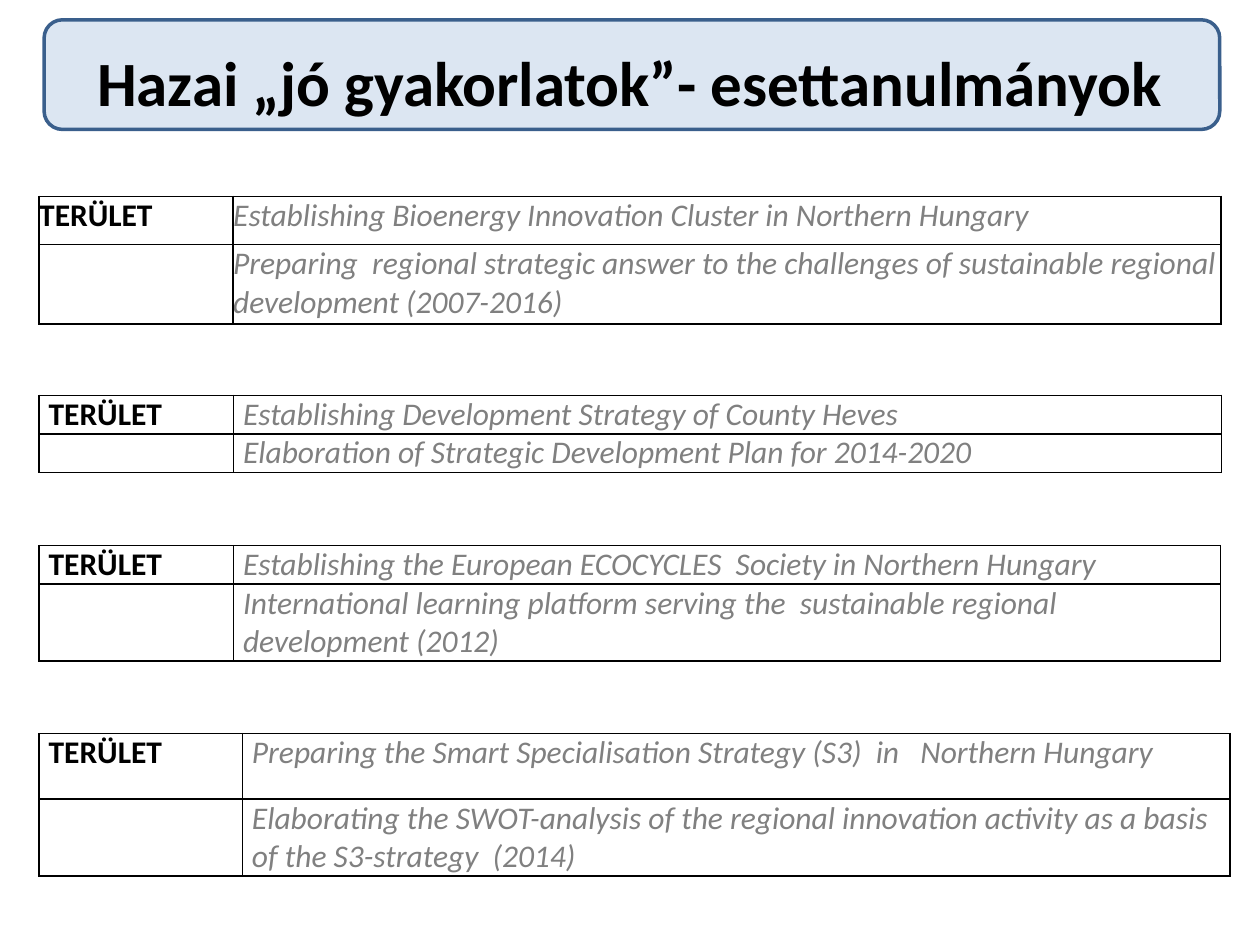
from pptx import Presentation
from pptx import util as u
from pptx.dml.color import RGBColor
from pptx.enum import shapes, text
from pptx.oxml import parse_xml
from pptx.oxml.ns import nsdecls

BLACK = RGBColor(0, 0, 0)
GREY = RGBColor(0x80, 0x80, 0x80)
PALE = RGBColor(0xDC, 0xE6, 0xF2)
BLUE = RGBColor(0x3A, 0x5F, 0x8C)
LEFT = 0.79
LABEL = "TERÜLET"

# top, label width, text width, row heights, side inset (cm), two texts
CASES = [
    (3.96, 3.91, 19.91, (0.97, 1.6), 0,
     "Establishing Bioenergy Innovation Cluster in Northern Hungary",
     "Preparing  regional strategic answer to the challenges of sustainable "
     "regional development (2007-2016)"),
    (7.97, 3.92, 19.91, (0.77, 0.77), 0.19,
     "Establishing Development Strategy of County Heves",
     "Elaboration of Strategic Development Plan for 2014-2020"),
    (11, 3.92, 19.89, (0.77, 1.53), 0.19,
     "Establishing the European ECOCYCLES  Society in Northern Hungary",
     "International learning platform serving the  sustainable regional "
     "development (2012)"),
    (14.79, 4.1, 19.91, (1.32, 1.53), 0.19,
     "Preparing the Smart Specialisation Strategy (S3)  in   Northern Hungary",
     "Elaborating the SWOT-analysis of the regional innovation activity as a "
     "basis of the S3-strategy  (2014)"),
]


class Deck:
    font = "Calibri"

    def __init__(self, show):
        self.slide = show.slides.add_slide(show.slide_layouts[5])

    def style(self, para, size, color, bold=False, italic=False):
        for run in para.runs:
            font = run.font
            font.name, font.size = self.font, u.Pt(size)
            font.bold, font.italic = bold, italic
            font.color.rgb = color

    def title(self, words, *box):
        head = self.slide.shapes.title
        head.left, head.top, head.width, head.height = map(u.Cm, box)
        frame = head.text_frame
        frame.text = words
        frame.vertical_anchor = text.MSO_ANCHOR.MIDDLE
        para = frame.paragraphs[0]
        para.alignment = text.PP_ALIGN.CENTER
        self.style(para, 36, BLACK, bold=True)

    def panel(self, *box):
        """Draw the rounded panel behind the title."""
        panel = self.slide.shapes.add_shape(
            shapes.MSO_SHAPE.ROUNDED_RECTANGLE, *map(u.Cm, box))
        panel.shadow.inherit = False
        panel.fill.solid()
        panel.fill.fore_color.rgb = PALE
        panel.line.color.rgb = BLUE
        panel.line.width = u.Pt(2)
        self.slide.shapes.title._element.addprevious(panel._element)

    def border(self, cell):
        props = cell._tc.get_or_add_tcPr()
        for spot, side in enumerate("LRTB"):
            props.insert(spot, parse_xml(
                f'<a:ln{side} {nsdecls("a")} w="{u.Pt(1)}"><a:solidFill>'
                f'<a:srgbClr val="{BLACK}"/></a:solidFill></a:ln{side}>'))

    def cell(self, cell, words, inset, label):
        cell.margin_left = cell.margin_right = u.Cm(inset)
        cell.margin_top = cell.margin_bottom = 0
        cell.fill.background()
        self.border(cell)
        if words:
            cell.text_frame.text = words
            self.style(cell.text_frame.paragraphs[0], 18,
                       BLACK if label else GREY, bold=label, italic=not label)

    def table(self, top, label, main, rows, inset, *texts):
        table = self.slide.shapes.add_table(
            2, 2, u.Cm(LEFT), u.Cm(top),
            u.Cm(label + main), u.Cm(sum(rows))).table
        table.first_row = table.horz_banding = False
        for col, width in zip(table.columns, (label, main)):
            col.width = u.Cm(width)
        for row, high, tag, words in zip(table.rows, rows, (LABEL, ""), texts):
            row.height = u.Cm(high)
            self.cell(row.cells[0], tag, inset, True)
            self.cell(row.cells[1], words, inset, False)


def main():
    show = Presentation()
    show.slide_width, show.slide_height = u.Cm(25.4), u.Cm(19.05)
    deck = Deck(show)
    deck.title("Hazai „jó gyakorlatok”- esettanulmányok", 0, 0.76, 25.4, 1.75)
    deck.panel(0.89, 0.4, 23.7, 2.21)
    for case in CASES:
        deck.table(*case)
    show.save("out.pptx")


if __name__ == "__main__":
    main()
